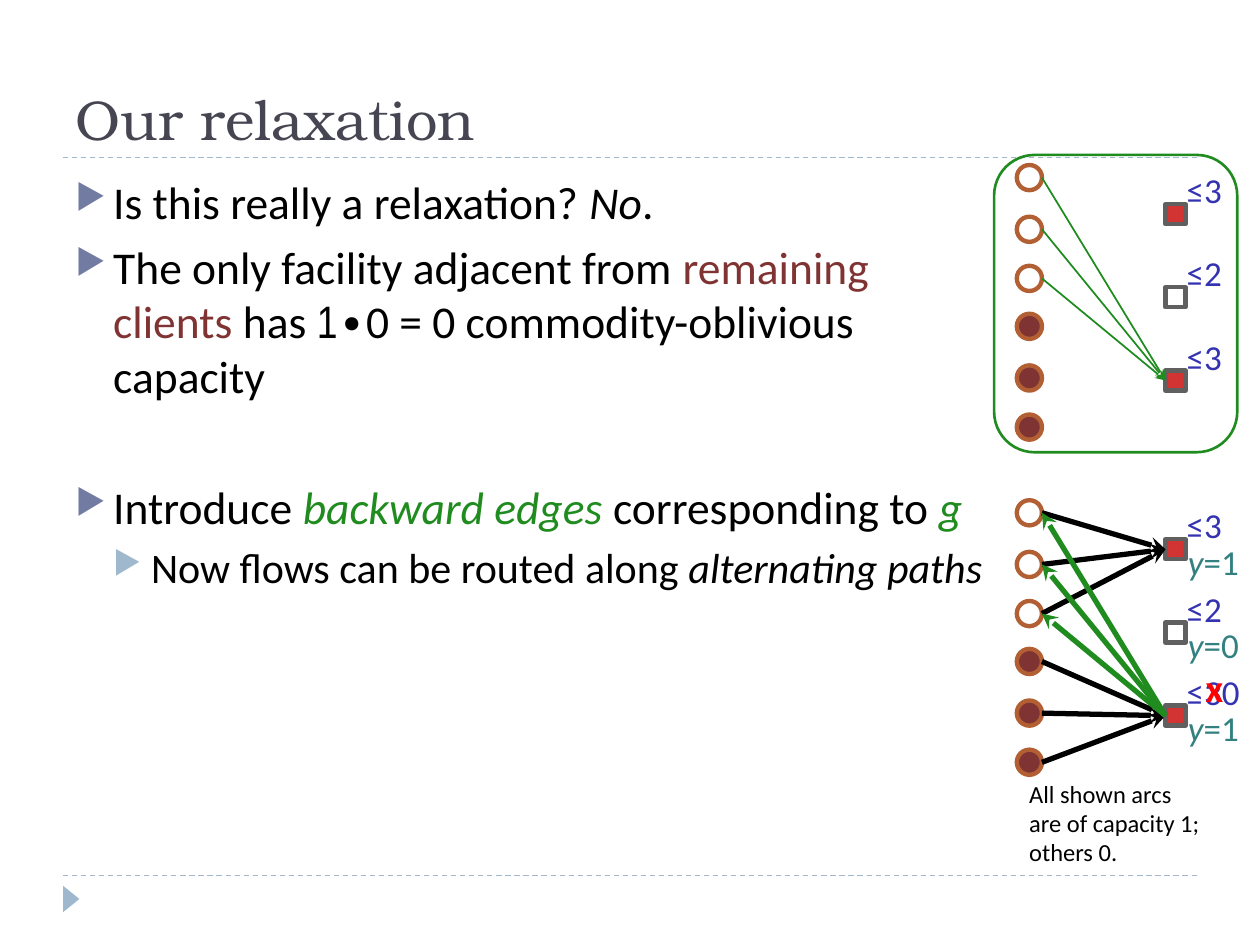
from lxml.etree import SubElement as Sub
from pptx import Presentation
from pptx.dml.color import RGBColor as RGB
from pptx.enum.dml import MSO_LINE as Dash
from pptx.enum.shapes import MSO_CONNECTOR as Conn, MSO_SHAPE as Kind
from pptx.enum.text import MSO_ANCHOR as Anchor, MSO_AUTO_SIZE as Auto
from pptx.oxml.ns import qn
from pptx.util import Inches, Pt

BLACK = RGB(0, 0, 0)
WHITE = RGB(255, 255, 255)
SLATE = RGB(0x46, 0x46, 0x53)
INDIGO = RGB(0x72, 0x7C, 0xA3)
SKY = RGB(0x9F, 0xB8, 0xCD)
GREEN = RGB(0x20, 0x8C, 0x20)
MAROON = RGB(0x80, 0x33, 0x33)
RUST = RGB(0xB2, 0x60, 0x33)
CRIMSON = RGB(0xD2, 0x33, 0x33)
GRAY = RGB(0x60, 0x60, 0x60)
BLUE = RGB(0x33, 0x33, 0xB2)
TEAL = RGB(0x33, 0x80, 0x80)
RED = RGB(255, 0, 0)

BODY = [
    dict(indent=0.3, before=6, size=26, mark=INDIGO, runs=[
        ("Is this really a relaxation? ", {}), ("No", dict(italic=True)), (".", {})]),
    dict(indent=0.3, before=6, size=26, mark=INDIGO, runs=[
        ("The only facility adjacent from ", {}),
        ("remaining clients", dict(color=MAROON)), (" has ", {}),
        ("1", dict(name="Arial Narrow")),
        ("∙0 = 0 commodity-oblivious capacity", {})]),
    dict(indent=0.3, before=43.5, size=26, mark=INDIGO, runs=[
        ("Introduce ", {}), ("backward edges", dict(color=GREEN, italic=True)),
        (" corresponding to ", {}), ("g", dict(color=GREEN, italic=True))]),
    dict(indent=0.6, before=5, size=24, mark=SKY, runs=[
        ("Now flows can be routed along ", {}),
        ("alternating paths", dict(italic=True))]),
]

CLIENTS = [(0, WHITE), (0.41, WHITE), (0.8, WHITE),
           (1.18, MAROON), (1.59, MAROON), (1.98, MAROON)]
SITES = [(0.31, CRIMSON), (0.97, WHITE), (1.63, CRIMSON)]
BACK = [(0, 2), (1, 2), (2, 2)]
AHEAD = [(0, 0), (1, 0), (2, 0), (3, 2), (4, 2), (5, 2)]
GRAPHS = [
    dict(top=1.31, caps=["≤3", "≤2", "≤3"], opens=[],
         arcs=[(BACK, GREEN, 1, "tailEnd")]),
    dict(top=3.97, caps=["≤3", "≤2", "≤30"], opens=["=1", "=0", "=1"],
         arcs=[(AHEAD, BLACK, 3, "tailEnd"), (BACK, GREEN, 3, "headEnd")]),
]
DOT, BOX = 0.2, 0.16
LEFT, RIGHT = 8.07, 9.25

deck = Presentation()
deck.slide_width, deck.slide_height = Inches(10), Inches(7.5)
slide = deck.slides.add_slide(deck.slide_layouts[6])
shapes = slide.shapes


def put_runs(para, runs, **base):
    for words, extra in runs:
        look = {"name": "Calibri", "color": BLACK, **base, **extra}
        run = para.add_run()
        run.text = words
        run.font.color.rgb = look.pop("color")
        run.font.size = Pt(look.pop("size"))
        for key, value in look.items():
            setattr(run.font, key, value)


def text_box(x, y, w, h, wrap=False, auto=Auto.SHAPE_TO_FIT_TEXT):
    frame = shapes.add_textbox(*map(Inches, (x, y, w, h))).text_frame
    frame.word_wrap, frame.auto_size = wrap, auto
    return frame


def label(x, y, w, h, runs, wrap=False, **base):
    put_runs(text_box(x, y, w, h, wrap).paragraphs[0], runs, **base)


def add_shape(kind, x, y, w, h, fill=None, line=None, width=2.5):
    shape = shapes.add_shape(kind, *map(Inches, (x, y, w, h)))
    shape.shadow.inherit = False
    if fill is None:
        shape.fill.background()
    else:
        shape.fill.solid()
        shape.fill.fore_color.rgb = fill
    if line is None:
        shape.line.fill.background()
    else:
        shape.line.color.rgb = line
        shape.line.width = Pt(width)
    return shape


def add_line(x1, y1, x2, y2, color, width):
    line = shapes.add_connector(Conn.STRAIGHT, *map(Inches, (x1, y1, x2, y2)))
    line.line.color.rgb = color
    line.line.width = Pt(width)
    Sub(line._element.spPr, qn("a:effectLst"))
    return line


def add_bullet(para, indent, color):
    props = para._p.get_or_add_pPr()
    props.set("marL", str(Inches(indent)))
    props.set("indent", str(-Inches(0.3)))
    Sub(Sub(props, qn("a:buClr")), qn("a:srgbClr"), val=str(color))
    Sub(props, qn("a:buSzPct"), val="76000")
    Sub(props, qn("a:buChar"), char="▶")


def draw_graph(top, caps, opens, arcs):
    for drop, fill in CLIENTS:
        add_shape(Kind.OVAL, LEFT, top + drop, DOT, DOT, fill, RUST)
    boxes = []
    for (drop, fill), cap in zip(SITES, caps):
        y = top + drop
        boxes.append(add_shape(Kind.RECTANGLE, RIGHT, y, BOX, BOX, fill, GRAY))
        label(RIGHT + 0.07, y - 0.33, 0.23 + 0.14 * len(cap), 0.44,
              [(cap, {})], size=20, color=BLUE)
    for (drop, _), state in zip(SITES, opens):
        label(RIGHT + 0.08, top + drop - 0.04, 0.61, 0.44,
              [("y", dict(italic=True)), (state, {})], size=20, color=TEAL)
    for pairs, color, width, end in arcs:
        for client, site in pairs:
            y = top + CLIENTS[client][0] + DOT / 2
            goal = top + SITES[site][0] + BOX / 2
            arc = add_line(LEFT + DOT, y, RIGHT, goal, color, width)
            arc.end_connect(boxes[site], 1)
            Sub(arc.line._get_or_add_ln(), qn("a:" + end), type="stealth")


for y in (1.25, 6.95):
    add_line(0.5, y, 9.5, y, SKY, 0.75).line.dash_style = Dash.DASH
add_shape(Kind.ISOSCELES_TRIANGLE, 0.46, 7.07, 0.21, 0.13, SKY).rotation = 90
frame = add_shape(Kind.ROUNDED_RECTANGLE, 7.89, 1.23, 1.93, 2.36, None, GREEN, 1.5)

title = text_box(0.5, 0.17, 9, 1.08, True, Auto.NONE)
title.vertical_anchor = Anchor.BOTTOM
put_runs(title.paragraphs[0], [("Our relaxation", {})],
         size=32, name="TeX Gyre Bonum", color=SLATE)

body = text_box(0.5, 1.33, 7.49, 5.4, True, Auto.NONE)
for i, item in enumerate(BODY):
    para = body.add_paragraph() if i else body.paragraphs[0]
    para.space_before = Pt(item["before"])
    add_bullet(para, item["indent"], item["mark"])
    put_runs(para, item["runs"], size=item["size"])

for graph in GRAPHS:
    draw_graph(**graph)
label(9.47, 5.22, 0.37, 0.47, [("x", {})], size=22, color=RED, bold=True)
label(LEFT, 6.13, 1.56, 0.81,
      [("All shown arcs are of capacity 1; others 0.", {})], True, size=14)

deck.save("out.pptx")
